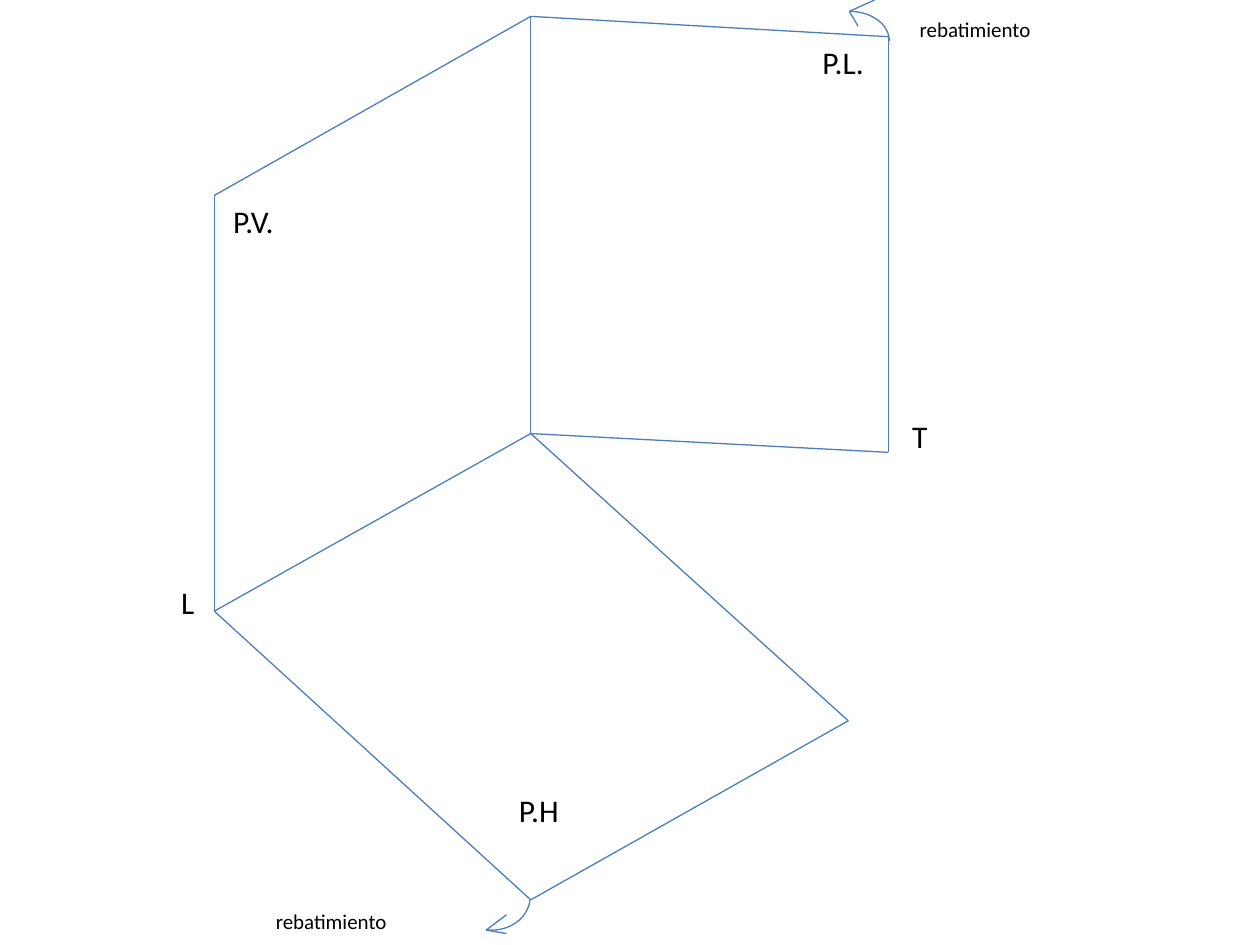
import pptx
import pptx.dml.color
import pptx.enum.shapes
import pptx.enum.text
import pptx.oxml
import pptx.util

Cm, Pt = pptx.util.Cm, pptx.util.Pt
HUES = {"line": "4B7EBC", "text": "000000"}

# Corners of the three planes, in cm
DOTS = {
    "left top": (4.32, 3.94),
    "fold top": (10.7, 0.33),
    "right top": (17.91, 0.74),
    "L": (4.32, 12.32),
    "fold": (10.7, 8.74),
    "T": (17.91, 9.12),
    "front": (10.7, 18.14),
    "far": (17.1, 14.53),
}
EDGES = [
    ("left top", "fold top"), ("fold top", "fold"), ("L", "fold"),
    ("fold", "T"), ("left top", "L"), ("L", "front"), ("fold", "far"),
    ("front", "far"), ("fold top", "right top"), ("right top", "T"),
]
# Folding arrows: arc box, turn in degrees, tip, ends of the two barbs
TURNS = [
    ((16.33, 0.23, 1.6, 1.19), 0, (17.12, 0.23), [(17.3, 0.53), (17.63, 0)]),
    ((9.19, 17.25, 1.4, 1.6), 96.4, (9.8, 18.75), [(10.21, 18.44), (10.21, 18.82)]),
]
# Text, left, top, width, format
LABELS = [
    ("P.V.", 4.45, 3.94, 3.2, {}),
    ("P.L.", 16.33, 0.74, 2.57, {}),
    ("rebatimiento", 18.29, 0.2, 2.8, {"size": 12}),
    ("rebatimiento", 5.31, 18.19, 4.39, {"size": 12}),
    ("P.H", 10.21, 15.82, 1.68, {}),
    ("L", 3.4, 11.63, 0.79, {"wrap": False}),
    ("T", 18.14, 8.28, 0.79, {}),
]


def hue(name):
    return pptx.dml.color.RGBColor.from_string(HUES[name])


def style(item):
    item.line.color.rgb = hue("line")
    item.line.width = Pt(0.75)


def add_line(slide, start, end):
    kind = pptx.enum.shapes.MSO_CONNECTOR.STRAIGHT
    line = slide.shapes.add_connector(kind, *map(Cm, start + end))
    style(line)
    pptx.oxml.xmlchemy.OxmlElement  # effect list is made below
    line._element.spPr.append(pptx.oxml.parse_xml(
        '<a:effectLst xmlns:a="http://schemas.openxmlformats.org/drawingml/2006/main"/>'))


def add_turn(slide, box, angle, tip, barbs):
    kind = pptx.enum.shapes.MSO_SHAPE.ARC
    arc = slide.shapes.add_shape(kind, *map(Cm, box))
    arc.rotation = angle
    arc.fill.background()
    arc.shadow.inherit = False
    style(arc)
    for end in barbs:
        add_line(slide, tip, end)


def add_text(slide, text, left, top, width, size=18, wrap=True):
    high = 1.02 if size == 18 else 0.76
    box = slide.shapes.add_textbox(Cm(left), Cm(top), Cm(width), Cm(high))
    frame = box.text_frame
    frame.word_wrap = wrap
    frame.auto_size = pptx.enum.text.MSO_AUTO_SIZE.SHAPE_TO_FIT_TEXT
    run = frame.paragraphs[0].add_run()
    run.text = text
    run.font.name = "Calibri"
    run.font.size = Pt(size)
    run.font.color.rgb = hue("text")


def main():
    deck = pptx.Presentation()
    deck.slide_width, deck.slide_height = Cm(25.4), Cm(19.05)
    slide = deck.slides.add_slide(deck.slide_layouts[6])
    for start, end in EDGES:
        add_line(slide, DOTS[start], DOTS[end])
    for turn in TURNS:
        add_turn(slide, *turn)
    for text, left, top, width, form in LABELS:
        add_text(slide, text, left, top, width, **form)
    deck.save("out.pptx")


if __name__ == "__main__":
    main()
